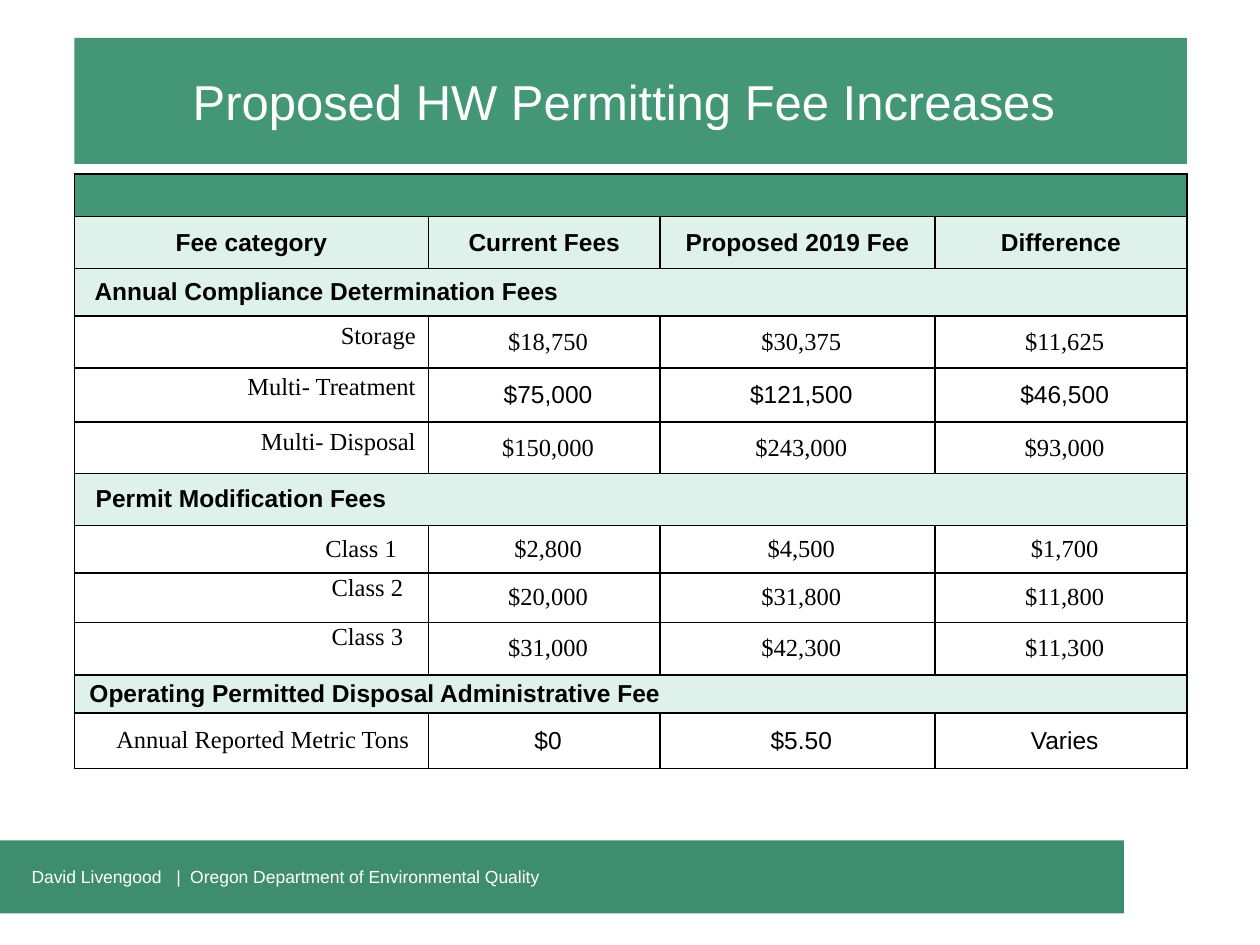
import pptx
import pptx.util
import pptx.dml.color
import pptx.enum.text
import pptx.enum.shapes
import pptx.oxml.ns
import lxml.etree

Inches, Pt = pptx.util.Inches, pptx.util.Pt
Align, Anchor = pptx.enum.text.PP_ALIGN, pptx.enum.text.MSO_ANCHOR
qn, Sub = pptx.oxml.ns.qn, lxml.etree.SubElement
colors = {"green": "439777", "foot": "3F8D6F", "pale": "DFF1EB",
          "white": "FFFFFF", "black": "000000"}
sans, serif = "Arial", "Times New Roman"


def paint(fill, name):
    fill.solid()
    fill.fore_color.rgb = pptx.dml.color.RGBColor.from_string(colors[name])


def style(para, align, face, size, color, bold=False):
    para.alignment = align
    font = para.font
    font.name, font.size, font.bold = face, Pt(size), bold
    paint(font.fill, color)


deck = pptx.Presentation()
deck.slide_width, deck.slide_height = Inches(10), Inches(7.5)
slide = deck.slides.add_slide(deck.slide_layouts[5])

title = slide.shapes.title
title.left, title.top = Inches(0.59), Inches(0.3)
title.width, title.height = Inches(8.83), Inches(1)
paint(title.fill, "green")
frame = title.text_frame
frame.text = "Proposed HW Permitting Fee Increases"
frame.vertical_anchor = Anchor.MIDDLE
frame.margin_right = Inches(0.21)
style(frame.paragraphs[0], Align.CENTER, sans, 28, "white")

foot = slide.shapes.add_shape(pptx.enum.shapes.MSO_SHAPE.RECTANGLE,
                              Inches(0), Inches(6.67), Inches(8.92), Inches(0.58))
foot.shadow.inherit = False
foot.line.fill.background()
paint(foot.fill, "foot")
frame = foot.text_frame
frame.text = "David Livengood\t|\tOregon Department of Environmental Quality"
frame.vertical_anchor = Anchor.MIDDLE
frame.margin_left = Inches(0.25)
para = frame.paragraphs[0]
style(para, Align.LEFT, sans, 10, "white")
tabs = lxml.etree.Element(qn("a:tabLst"))
for stop in (1.15, 1.26):
    Sub(tabs, qn("a:tab"), pos=str(Inches(stop)), algn="l")
para._p.pPr.insert(0, tabs)

widths = [2.81, 1.84, 2.18, 2]
heights = [0.34, 0.41, 0.38, 0.41, 0.43, 0.41, 0.41, 0.38, 0.39, 0.42, 0.3, 0.44]
heads = ["Fee category", "Current Fees", "Proposed 2019 Fee", "Difference"]
bands = {0: ("", 0.01), 2: ("Annual Compliance Determination Fees", 0.16),
         6: ("Permit Modification Fees", 0.17),
         10: ("Operating Permitted Disposal Administrative Fee", 0.12)}
fees = {
    3: (["Storage", "$18,750", "$30,375", "$11,625"], serif, 0.1, 0.05),
    4: (["Multi- Treatment", "$75,000", "$121,500", "$46,500"], sans, 0.1, 0.05),
    5: (["Multi- Disposal", "$150,000", "$243,000", "$93,000"], serif, 0.1, 0.05),
    7: (["Class 1", "$2,800", "$4,500", "$1,700"], serif, 0.25, None),
    8: (["Class 2", "$20,000", "$31,800", "$11,800"], serif, 0.2, 0.01),
    9: (["Class 3", "$31,000", "$42,300", "$11,300"], serif, 0.2, 0.01),
    11: (["Annual Reported Metric Tons", "$0", "$5.50", "Varies"], sans, 0.15, None),
}

table = slide.shapes.add_table(len(heights), len(widths), Inches(0.59), Inches(1.38),
                               Inches(sum(widths)), Inches(sum(heights))).table
for col, width in zip(table.columns, widths):
    col.width = Inches(width)

for r, height in enumerate(heights):
    table.rows[r].height = Inches(height)
    if r in bands:
        table.cell(r, 0).merge(table.cell(r, 3))
    for c in range(len(widths)):
        cell = table.cell(r, c)
        cell.margin_left = cell.margin_right = Inches(0.01)
        cell.margin_top = cell.margin_bottom = Inches(0.01)
        cell.vertical_anchor = Anchor.MIDDLE
        text, face, align, shade = "", sans, Align.CENTER, "pale"
        if r in bands:
            align = Align.LEFT
            if c == 0:
                text, left = bands[r]
                cell.margin_left = Inches(left)
            if r == 0:
                shade = "green"
        elif r in fees:
            row, face, right, top = fees[r]
            text, shade = row[c], "white"
            cell.margin_left = Inches(0.07)
            if c == 0:
                face, align = serif, Align.RIGHT
                cell.margin_right = Inches(right)
                if top is not None:
                    cell.vertical_anchor = Anchor.TOP
                    cell.margin_top = Inches(top)
        else:
            text = heads[c]
        cell.text = text
        para = cell.text_frame.paragraphs[0]
        style(para, align, face, 14, "black", r not in fees)
        if r and (c or r not in (3, 4, 5)):
            para.space_after = Pt(6)
        props = cell._tc.get_or_add_tcPr()
        for side in ("a:lnL", "a:lnR", "a:lnT", "a:lnB"):
            edge = Sub(props, qn(side), w=str(Pt(1)))
            Sub(Sub(edge, qn("a:solidFill")), qn("a:srgbClr"), val=colors["black"])
        paint(cell.fill, shade)

deck.save("out.pptx")
